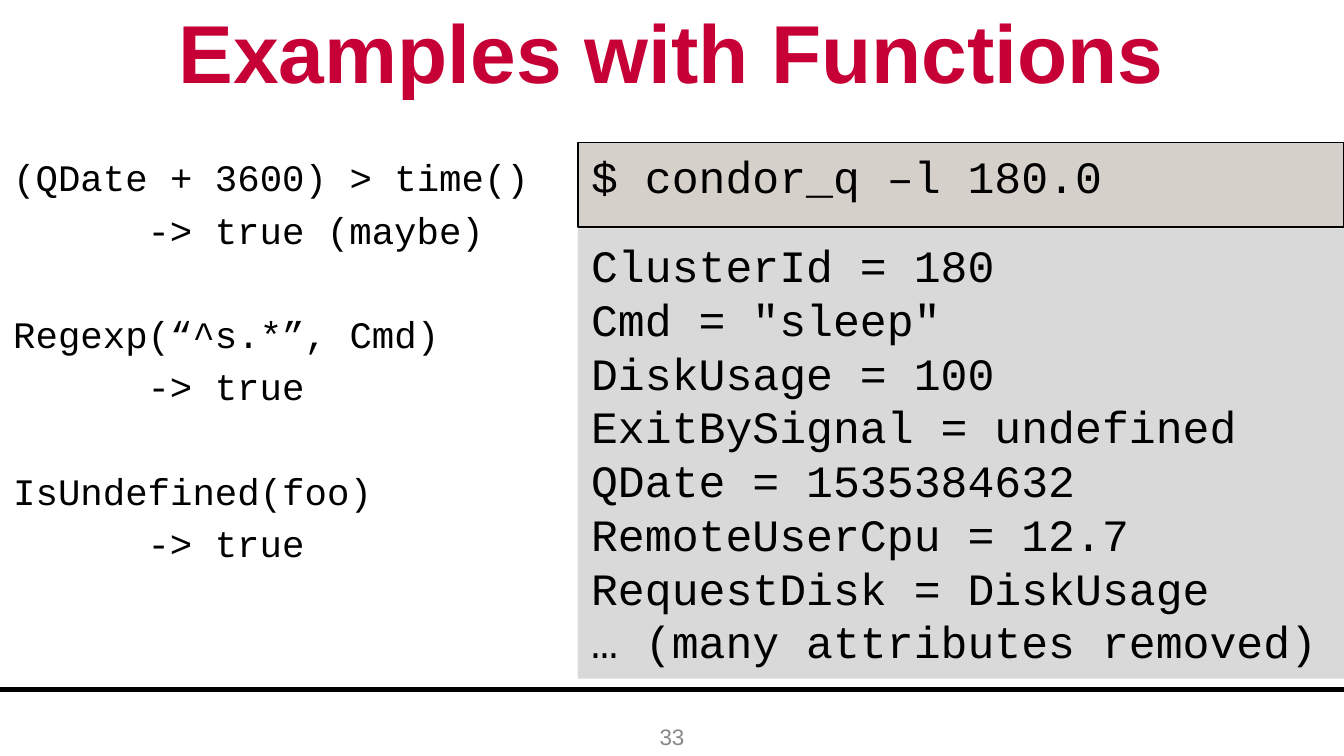
from dataclasses import dataclass

from pptx import Presentation
from pptx import util as u
from pptx.dml.color import RGBColor
from pptx.enum import shapes, text
from pptx.oxml.xmlchemy import OxmlElement


@dataclass(frozen=True)
class Theme:
    """Colours, fonts and type sizes of the slide."""
    crimson: str = "C60036"
    black: str = "000000"
    grey: str = "898989"
    panel: str = "D9D9D9"
    prompt: str = "D6D0CA"
    sans: str = "Arial"
    mono: str = "Courier New"
    title: int = 44
    listing: int = 24
    example: int = 20
    number: int = 12


THEME = Theme()

EXAMPLES = [
    ("(QDate + 3600) > time()", "true (maybe)"),
    ("Regexp(“^s.*”, Cmd)", "true"),
    ("IsUndefined(foo)", "true"),
]
COMMAND = "$ condor_q –l 180.0"
ATTRIBUTES = [
    "ClusterId = 180",
    'Cmd = "sleep"',
    "DiskUsage = 100",
    "ExitBySignal = undefined",
    "QDate = 1535384632",
    "RemoteUserCpu = 12.7",
    "RequestDisk = DiskUsage",
    "… (many attributes removed)",
]


def inches(box):
    """Turn a box of left, top, width and height into lengths."""
    return [u.Inches(side) for side in box]


def add_tab_stop(paragraph, position):
    """Give the paragraph a left tab stop at the position in inches."""
    stops = OxmlElement("a:tabLst")
    stop = OxmlElement("a:tab")
    stop.set("pos", str(u.Inches(position)))
    stop.set("algn", "l")
    stops.append(stop)
    paragraph._p.get_or_add_pPr().append(stops)


def write(frame, lines, font, size, color, bold=False,
          align=text.PP_ALIGN.LEFT, anchor=text.MSO_ANCHOR.TOP, gaps=None):
    """Fill a text frame with one paragraph per line."""
    frame.word_wrap = True
    frame.vertical_anchor = anchor
    for index, line in enumerate(lines):
        paragraph = frame.add_paragraph() if index else frame.paragraphs[0]
        if line.startswith("\t"):
            add_tab_stop(paragraph, 1)
        paragraph.alignment = align
        if index and gaps:
            paragraph.space_before = u.Pt(gaps[index])
        run = paragraph.add_run()
        run.text = line
        run.font.name = font
        run.font.size = u.Pt(size)
        run.font.bold = bold
        run.font.color.rgb = RGBColor.from_string(color)


def add_centred(slide, box, line, size, color, bold=False):
    """Place one centred line of sans text in the box."""
    label = slide.shapes.add_textbox(*inches(box))
    write(label.text_frame, [line], THEME.sans, size, color, bold,
          text.PP_ALIGN.CENTER, text.MSO_ANCHOR.MIDDLE)


def add_examples(slide, box):
    """Place each expression with its indented result in the box."""
    lines, gaps = [], []
    for expression, result in EXAMPLES:
        lines += [expression, f"\t-> {result}"]
        gaps += [32, 4]
    examples = slide.shapes.add_textbox(*inches(box))
    write(examples.text_frame, lines, THEME.mono, THEME.example, THEME.black, gaps=gaps)


def add_panel(slide, box, lines, fill, outlined=False):
    """Place a filled rectangle of monospaced lines in the box."""
    panel = slide.shapes.add_shape(shapes.MSO_SHAPE.RECTANGLE, *inches(box))
    panel.shadow.inherit = False
    panel.fill.solid()
    panel.fill.fore_color.rgb = RGBColor.from_string(fill)
    if outlined:
        panel.line.color.rgb = RGBColor.from_string(THEME.black)
        panel.line.width = u.Pt(0.75)
    else:
        panel.line.fill.background()
    write(panel.text_frame, lines, THEME.mono, THEME.listing, THEME.black)


def add_terminal(slide, box):
    """Place the command strip and, on a backing below it, the attributes."""
    left, top, width, height = box
    strip, backing, offset = 0.63, 0.64, 0.66
    listing = height - offset
    add_panel(slide, (left, top + backing, width, listing), [], THEME.panel)
    add_panel(slide, (left, top, width, strip), [COMMAND], THEME.prompt, outlined=True)
    add_panel(slide, (left, top + offset, width, listing), ATTRIBUTES, THEME.panel)


def add_footer(slide, box):
    """Place the rule at the top of the box and the page number under it."""
    left, top, width, _ = box
    rule = slide.shapes.add_connector(
        shapes.MSO_CONNECTOR.STRAIGHT, *inches((left, top, left + width, top)))
    rule.line.color.rgb = RGBColor.from_string(THEME.black)
    rule.line.width = u.Pt(2.25)
    rule._element.spPr.append(OxmlElement("a:effectLst"))
    number_width = 2.33
    add_centred(slide, (left + (width - number_width) / 2, top + 0.2, number_width, 0.3),
                "33", THEME.number, THEME.grey)


def main():
    """Build the slide and save it."""
    deck = Presentation()
    deck.slide_width = u.Inches(10)
    deck.slide_height = deck.slide_width * 9 // 16
    slide = deck.slides.add_slide(deck.slide_layouts[6])
    add_footer(slide, (0, 5.13, 10, 0.49))
    add_examples(slide, (0, 1.1, 4.3, 3.66))
    add_centred(slide, (0, 0, 10, 0.75), "Examples with Functions",
                THEME.title, THEME.crimson, bold=True)
    add_terminal(slide, (4.3, 1.06, 5.7, 3.99))
    deck.save("out.pptx")


if __name__ == "__main__":
    main()
